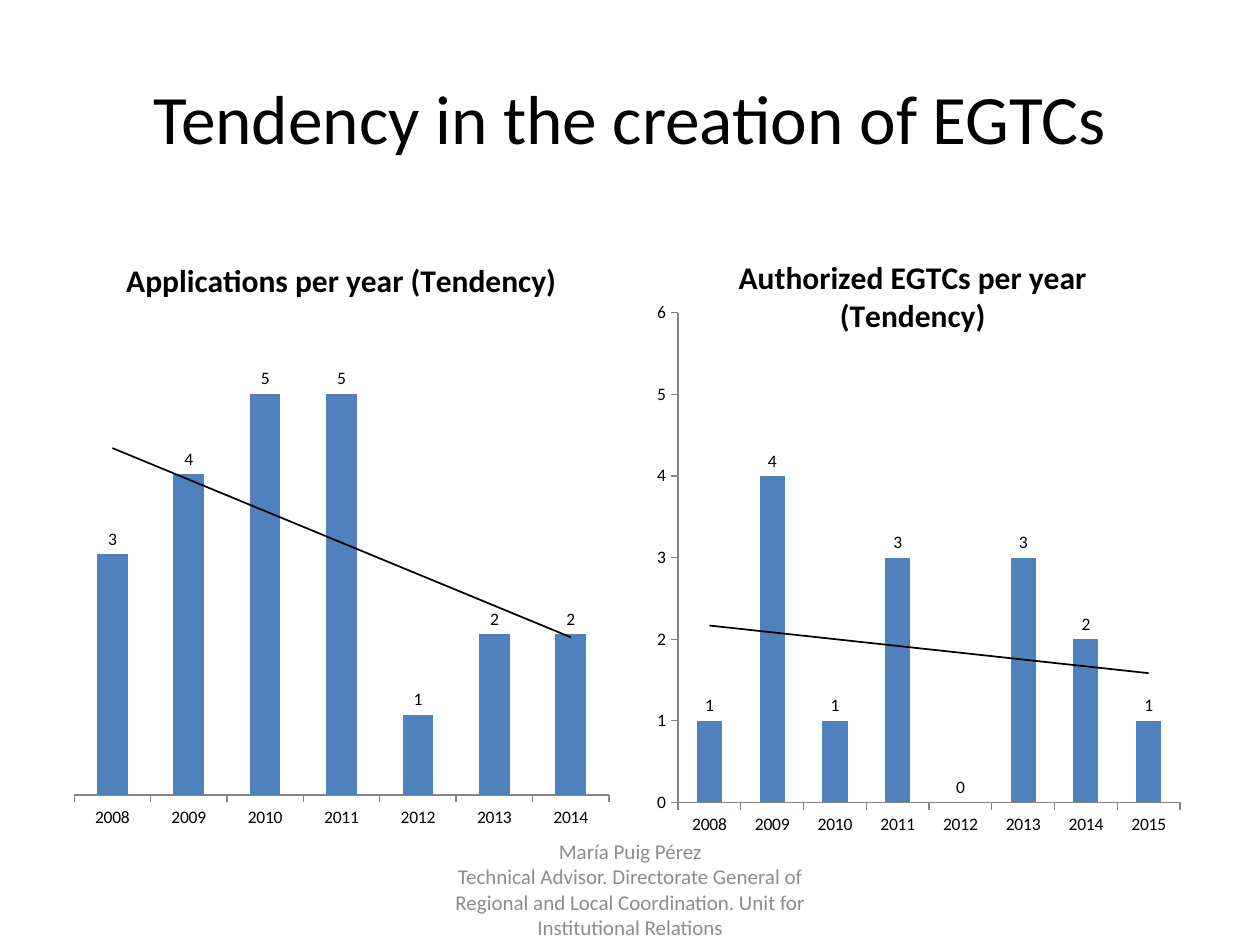
"""Build a slide with two yearly column charts and their linear trends."""
from dataclasses import dataclass

import lxml.etree
import pptx
import pptx.chart.data
import pptx.dml.color
import pptx.enum.chart
import pptx.enum.text
import pptx.oxml
import pptx.oxml.ns
import pptx.util

Cm = pptx.util.Cm
Pt = pptx.util.Pt
COLORS = {"ink": "000000", "muted": "8C8C8C", "column": "4F81BD", "axis": "868686"}
FONT = "Calibri"
FOOTER = (
    "María Puig Pérez",
    "Technical Advisor. Directorate General of Regional and Local Coordination. "
    "Unit for Institutional Relations",
)


@dataclass
class TrendChart:
    """A column chart: title, values from 2008 on, place in cm, plot area in fractions."""

    title: str
    values: tuple[int, ...]
    place: tuple[float, float, float, float]
    plot_area: tuple[float, float, float, float]
    show_values_axis: bool


CHARTS = (
    TrendChart("Authorized EGTCs per year\n(Tendency)", (1, 4, 1, 3, 0, 3, 2, 1),
               (12.9, 4.72, 11, 12.19), (0.07, 0.13, 0.92, 0.81), True),
    TrendChart("Applications per year (Tendency)", (3, 4, 5, 5, 1, 2, 2),
               (1.27, 4.72, 11.23, 12.29), (0.02, 0.13, 0.96, 0.79), False),
)


def color(name: str) -> pptx.dml.color.RGBColor:
    """Return a named colour."""
    return pptx.dml.color.RGBColor.from_string(COLORS[name])


def format_font(font, ink: str, **values) -> None:
    """Apply the slide font, a colour and further font values."""
    for name, value in {"name": FONT, **values}.items():
        setattr(font, name, value)
    font.color.rgb = color(ink)


def chart_element(content: str) -> lxml.etree._Element:
    """Parse a chart element written with the c and a prefixes."""
    tag, rest = content.split(">", 1)
    return pptx.oxml.parse_xml(f"{tag} {pptx.oxml.ns.nsdecls('c', 'a')}>{rest}")


def place_plot(chart, area: tuple[float, float, float, float]) -> None:
    """Fix the inner plot area of a chart."""
    sizes = "".join(f'<c:{key} val="{value}"/>' for key, value in zip("xywh", area))
    layout = chart_element(
        '<c:layout><c:manualLayout><c:layoutTarget val="inner"/>'
        '<c:xMode val="edge"/><c:yMode val="edge"/>'
        f"{sizes}</c:manualLayout></c:layout>")
    plot_area = chart._chartSpace.chart.plotArea
    for old in plot_area.findall(pptx.oxml.ns.qn("c:layout")):
        plot_area.remove(old)
    plot_area.insert(0, layout)


def add_trend(series) -> None:
    """Add a linear trend line to a series."""
    trend = chart_element(
        '<c:trendline><c:spPr><a:ln w="12700"><a:solidFill>'
        f'<a:srgbClr val="{COLORS["ink"]}"/></a:solidFill></a:ln></c:spPr>'
        '<c:trendlineType val="linear"/><c:dispRSqr val="0"/><c:dispEq val="0"/>'
        "</c:trendline>")
    series._element.find(pptx.oxml.ns.qn("c:cat")).addprevious(trend)


def format_axis(axis, **values) -> None:
    """Apply axis values, tick marks and the axis line."""
    shared = {"has_major_gridlines": False,
              "major_tick_mark": pptx.enum.chart.XL_TICK_MARK.OUTSIDE,
              "minor_tick_mark": pptx.enum.chart.XL_TICK_MARK.NONE}
    for name, value in {**shared, **values}.items():
        setattr(axis, name, value)
    axis.format.line.color.rgb = color("axis")
    axis.format.line.width = Pt(0.75)


def add_trend_chart(page, item: TrendChart) -> None:
    """Draw one column chart with labels and a trend line."""
    data = pptx.chart.data.CategoryChartData()
    data.categories = [str(2008 + index) for index in range(len(item.values))]
    data.add_series("Series 1", item.values)
    chart = page.shapes.add_chart(
        pptx.enum.chart.XL_CHART_TYPE.COLUMN_CLUSTERED, *map(Cm, item.place), data).chart
    chart.has_legend = False
    format_font(chart.font, "ink", size=Pt(10))
    chart.chart_title.text_frame.text = item.title
    for para in chart.chart_title.text_frame.paragraphs:
        for span in para.runs:
            format_font(span.font, "ink", size=Pt(18), bold=True)
    plot = chart.plots[0]
    for name, value in {"gap_width": 150, "vary_by_categories": False,
                        "has_data_labels": True}.items():
        setattr(plot, name, value)
    plot.data_labels.show_value = True
    plot.data_labels.position = pptx.enum.chart.XL_LABEL_POSITION.OUTSIDE_END
    series = plot.series[0]
    series.format.fill.solid()
    series.format.fill.fore_color.rgb = color("column")
    add_trend(series)
    format_axis(chart.category_axis)
    format_axis(chart.value_axis, minimum_scale=0, maximum_scale=6, major_unit=1,
                visible=item.show_values_axis)
    place_plot(chart, item.plot_area)


def fill_text(box, lines: tuple[str, ...], ink: str, size: float) -> None:
    """Write centred paragraphs in a box."""
    frame = box.text_frame
    frame.text = "\n".join(lines)
    frame.word_wrap = True
    frame.vertical_anchor = pptx.enum.text.MSO_ANCHOR.MIDDLE
    for para in frame.paragraphs:
        para.alignment = pptx.enum.text.PP_ALIGN.CENTER
        for span in para.runs:
            format_font(span.font, ink, size=Pt(size))


def main() -> None:
    """Build and save the deck."""
    deck = pptx.Presentation()
    deck.slide_width, deck.slide_height = Cm(25.4), Cm(19.05)
    page = deck.slides.add_slide(deck.slide_layouts[5])
    title = page.shapes.title
    for name, value in {"left": 1.27, "top": 0.76, "width": 22.86, "height": 3.18}.items():
        setattr(title, name, Cm(value))
    fill_text(title, ("Tendency in the creation of EGTCs",), "ink", 39.6)
    footer = page.shapes.add_textbox(Cm(8.68), Cm(16.9), Cm(8.05), Cm(2.05))
    fill_text(footer, FOOTER, "muted", 12)
    for item in CHARTS:
        add_trend_chart(page, item)
    deck.save("out.pptx")


if __name__ == "__main__":
    main()
